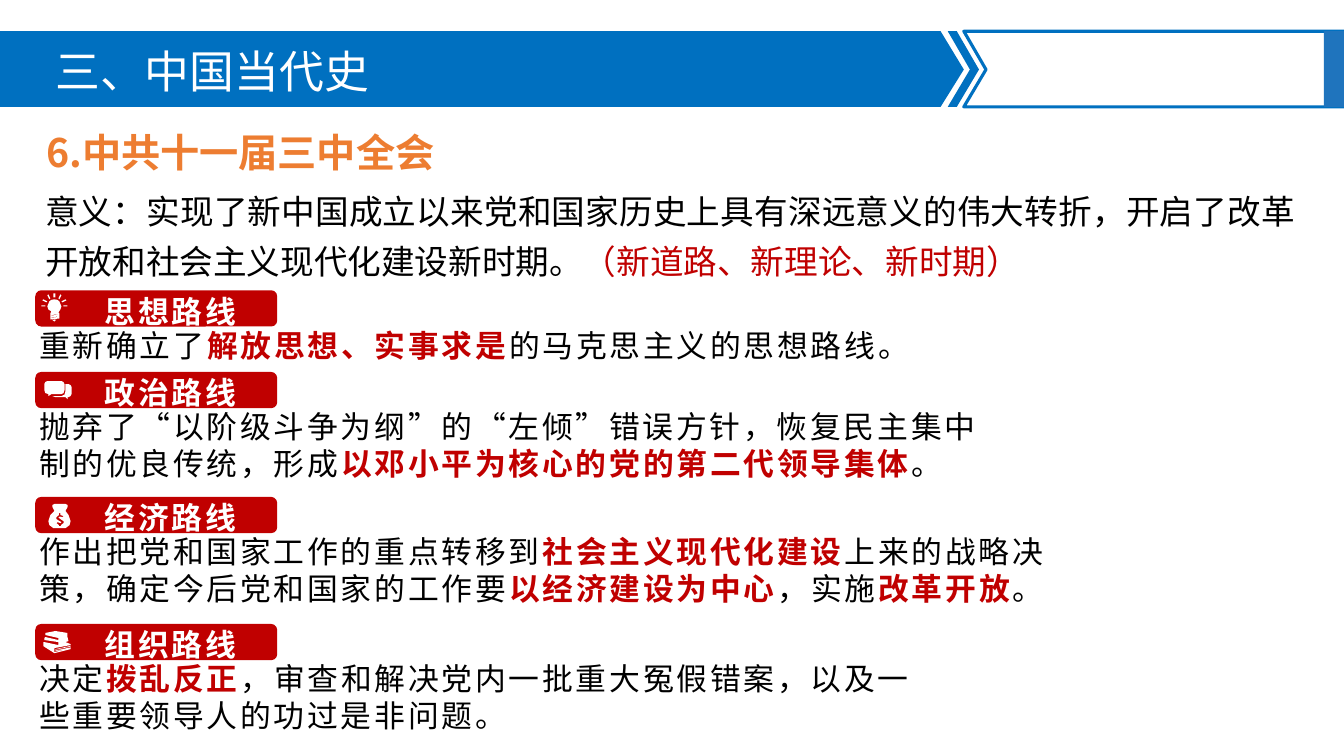
from dataclasses import dataclass

from lxml import etree
from pptx import Presentation
from pptx import util as u
from pptx.dml import color
from pptx.enum import shapes as kinds, text
from pptx.oxml import ns


@dataclass(frozen=True)
class Theme:
    font: str = "Noto Sans CJK SC"
    blue: str = "0070C0"
    edge_blue: str = "1F74BD"
    orange: str = "ED7D31"
    red: str = "C00000"
    black: str = "000000"
    white: str = "FFFFFF"
    title: int = 32
    heading: int = 28
    lead: int = 24
    body: int = 22


THEME = Theme()
UNITS_PER_INCH = 1000
BADGE_LEFT = 0.35

# Icon outlines, in hundredths of an inch from the corner of the badge
RAYS = [
    [(28, 15), (32, 15), (32, 16), (28, 16)],
    [(30, 9), (31, 10), (27, 12), (26, 11)],
    [(25, 4), (23, 8), (24, 9), (26, 5)],
]
BULB = RAYS + [[(38 - x, y) for x, y in ray] for ray in RAYS] + [
    [(18, 3), (20, 3), (20, 7), (18, 7)],
    [(19, 9), (22, 9.5), (24, 11), (26, 16), (25, 19), (23, 22), (24, 23),
     (24, 28), (15, 29), (15, 23), (16, 21), (13, 19), (12, 16), (14, 11),
     (16, 9.5)],
    [(21, 29), (19, 31), (17, 29.5)],
    [(22, 26), (16, 27), (16, 27.5), (22, 26.5)],
    [(22, 24), (16, 24.5), (16, 25), (22, 24.5)],
]
SPEECH = [
    [(12, 9), (26, 9), (28, 10), (29, 12), (29, 18), (28, 21), (26, 22),
     (16, 22), (13, 24), (13, 22), (10, 21), (9, 18), (9, 12), (10, 10)],
    [(30, 12), (33, 12), (35, 13), (36, 15), (36, 22), (35, 24), (33, 25),
     (32, 25), (32, 27), (30, 25), (20, 25), (17, 24), (26, 24), (29, 22.5),
     (30, 19)],
]
MONEY_BAG = [
    [(19, 7), (30, 7), (32, 8), (32, 10), (30, 14), (33, 18), (35, 24),
     (34, 28), (30, 31), (18, 31), (14, 28), (13, 24), (15, 18), (19, 14),
     (17, 10), (17, 8)],
    [(23.5, 16), (25, 16), (25, 18), (28, 19), (27, 20), (24, 19.5),
     (23, 20.5), (25, 22), (28, 24), (28, 26), (25.5, 28), (25.5, 29),
     (23.5, 29), (23.5, 28), (21, 26), (22, 25), (25, 26), (26, 25),
     (24, 24), (21, 22), (21, 20), (23.5, 18)],
]
BOOKS = [
    [(35, 21), (19, 24), (19, 28), (35, 24), (35, 25), (19, 29), (8, 22),
     (8, 18), (9, 18), (23, 21), (23, 18), (9, 16), (9, 14), (10, 13),
     (23, 16), (23, 14), (10, 11), (10, 9), (20, 7), (32, 9), (32, 13),
     (33, 17), (30, 18), (35, 20)],
    [(20, 27), (35, 24), (35, 23.3), (20, 26.4)],
    [(20, 25.5), (35, 22.5), (35, 21.8), (20, 25)],
]

# Badge top, body width, label, icon, body text with key phrases between bars
ROUTES = [
    (4.93, 10.3, "经济路线", MONEY_BAG,
     "作出把党和国家工作的重点转移到|社会主义现代化建设|上来的战略决策，"
     "确定今后党和国家的工作要|以经济建设为中心|，实施|改革开放|。"),
    (2.88, 9.02, "思想路线", BULB,
     "重新确立了|解放思想、实事求是|的马克思主义的思想路线。"),
    (3.69, 9.57, "政治路线", SPEECH,
     "抛弃了“以阶级斗争为纲”的“左倾”错误方针，恢复民主集中制的优良传统，"
     "形成|以邓小平为核心的党的第二代领导集体|。"),
    (6.19, 9.02, "组织路线", BOOKS,
     "决定|拨乱反正|，审查和解决党内一批重大冤假错案，"
     "以及一些重要领导人的功过是非问题。"),
]


def assign(target, values):
    for name, value in values.items():
        setattr(target, name, value)


def rgb(value):
    return color.RGBColor.from_string(value)


def paint(shape, fill=None, line=None):
    shape.shadow.inherit = False
    if fill:
        shape.fill.solid()
        shape.fill.fore_color.rgb = rgb(fill)
    else:
        shape.fill.background()
    if line:
        shape.line.color.rgb = rgb(line)
        shape.line.width = u.Pt(2.25)
    else:
        shape.line.fill.background()


def add_outline(shapes, contours, left=0, top=0, **look):
    """Draw closed contours, given in inches, as one shape."""
    scaled = [[(x * UNITS_PER_INCH, y * UNITS_PER_INCH) for x, y in contour]
              for contour in contours]
    builder = shapes.build_freeform(*scaled[0][0],
                                    scale=u.Inches(1) / UNITS_PER_INCH)
    for number, contour in enumerate(scaled):
        if number:
            builder.move_to(*contour[0])
        builder.add_line_segments(contour[1:], close=True)
    paint(builder.convert_to_shape(u.Inches(left), u.Inches(top)), **look)


def add_block(shapes, kind, area, fill):
    paint(shapes.add_shape(kind, *map(u.Inches, area)), fill)


def add_span(para, words, size, ink, bold=False, tracking=0):
    span = para.add_run()
    span.text = words
    assign(span.font, {"name": THEME.font, "size": u.Pt(size), "bold": bold})
    span.font.color.rgb = rgb(ink)
    props = span.font._element
    props.set("lang", "zh-CN")
    if tracking:
        props.set("spc", str(tracking * 100))
    etree.SubElement(props, ns.qn("a:ea"), typeface=THEME.font)


def add_text(shapes, area, spans, frame_format=None, para_format=None):
    """Add one paragraph of spans, each a dict of add_span arguments."""
    frame = shapes.add_textbox(*map(u.Inches, area)).text_frame
    assign(frame, {"word_wrap": True,
                   "auto_size": text.MSO_AUTO_SIZE.SHAPE_TO_FIT_TEXT,
                   **(frame_format or {})})
    para = frame.paragraphs[0]
    assign(para, para_format or {})
    for span in spans:
        add_span(para, **span)


def add_banner(shapes):
    top, middle, bottom = 0.31, 0.69, 1.06
    add_outline(shapes, [[(0, top), (9.33, top), (9.56, middle),
                          (9.33, bottom), (0, bottom)]], fill=THEME.blue)
    add_outline(shapes, [[(9.4, top), (9.49, top), (9.71, middle),
                          (9.49, bottom), (9.4, bottom), (9.62, middle)]],
                fill=THEME.blue)
    add_outline(shapes, [[(9.56, top), (13.36, top), (13.36, bottom),
                          (9.56, bottom), (9.78, middle)]], line=THEME.blue)
    add_text(shapes, (0.45, 0.38, 6.88, 0.64),
             [dict(words="三、中国当代史", size=THEME.title, ink=THEME.white)])
    add_block(shapes, kinds.MSO_SHAPE.RECTANGLE,
              (13.13, top, 0.26, bottom - top), THEME.edge_blue)


def add_route(page, top, width, label, icon, body):
    shapes = page.shapes.add_group_shape().shapes
    style = {"size": THEME.body, "tracking": 2}
    spans = [dict(words=words, ink=THEME.red if number % 2 else THEME.black,
                  bold=number % 2 == 1, **style)
             for number, words in enumerate(body.split("|"))]
    height = 0.47 if label == "思想路线" else 0.84
    add_text(shapes, (0.29, top + 0.31, width, height), spans)
    add_block(shapes, kinds.MSO_SHAPE.ROUNDED_RECTANGLE,
              (BADGE_LEFT, top, 2.4, 0.36), THEME.red)
    add_text(shapes, (0.92, top - 0.14, 1.54, 0.58),
             [dict(words=label, ink=THEME.white, bold=True, **style)],
             {"vertical_anchor": text.MSO_ANCHOR.MIDDLE,
              "margin_left": 0, "margin_right": 0},
             {"alignment": text.PP_ALIGN.CENTER, "line_spacing": 1.3})
    contours = [[(x / 100, y / 100) for x, y in contour] for contour in icon]
    add_outline(shapes, contours, BADGE_LEFT, top, fill=THEME.white)


def main():
    deck = Presentation()
    assign(deck, {"slide_width": u.Inches(13.33),
                  "slide_height": u.Inches(7.5)})
    page = deck.slides.add_slide(deck.slide_layouts[6])
    add_banner(page.shapes)
    add_text(page.shapes, (0.36, 1.22, 10.6, 0.57),
             [dict(words="6.中共十一届三中全会", size=THEME.heading,
                   ink=THEME.orange, bold=True)])
    for route in ROUTES:
        add_route(page, *route)
    add_text(page.shapes, (0.35, 1.74, 12.6, 1.11),
             [dict(words="意义：实现了新中国成立以来党和国家历史上具有深远意义的伟大转折，"
                         "开启了改革开放和社会主义现代化建设新时期。",
                   size=THEME.lead, ink=THEME.black),
              dict(words="（新道路、新理论、新时期）",
                   size=THEME.lead, ink=THEME.red)],
             para_format={"alignment": text.PP_ALIGN.JUSTIFY,
                          "line_spacing": 1.25})
    deck.save("out.pptx")


if __name__ == "__main__":
    main()
